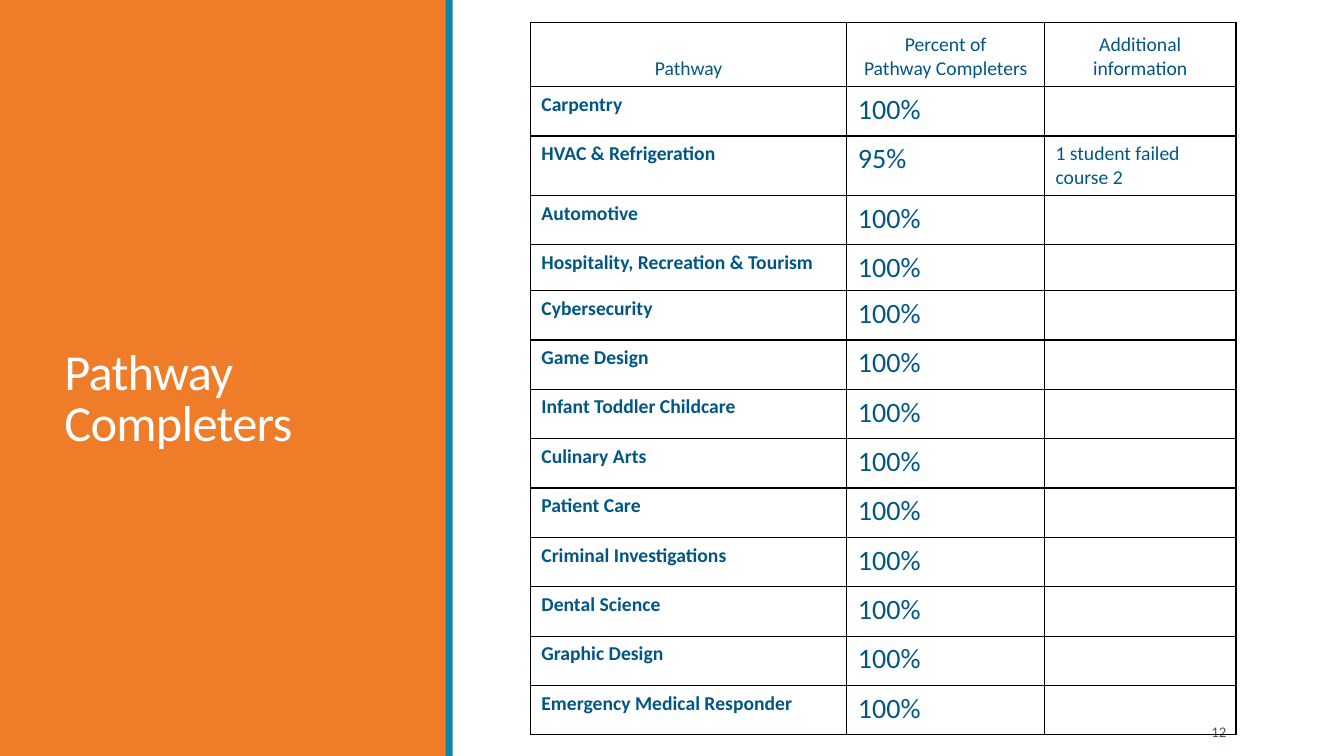
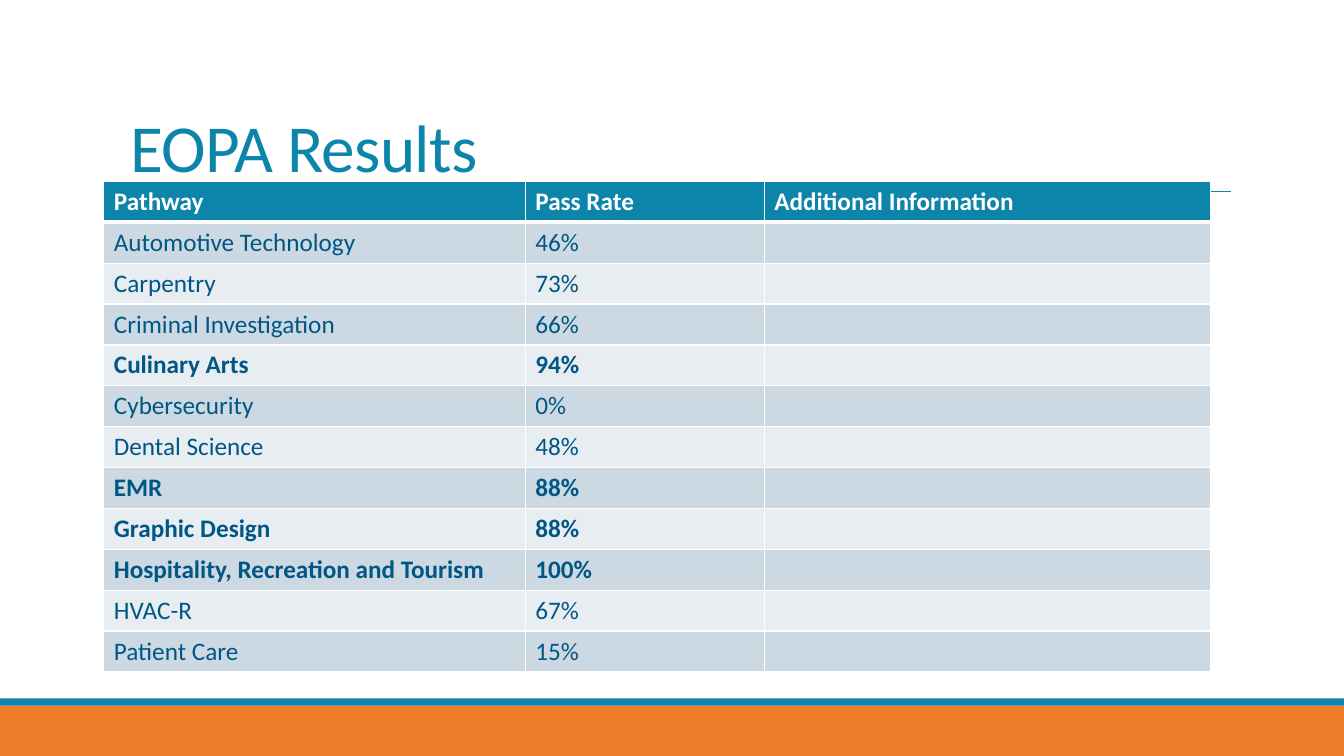
from lxml import etree
from pptx import Presentation
from pptx.dml.color import RGBColor
from pptx.enum.shapes import MSO_CONNECTOR, MSO_SHAPE
from pptx.enum.text import MSO_ANCHOR, PP_ALIGN
from pptx.oxml.ns import qn
from pptx.util import Inches, Pt

RECTANGLE = MSO_SHAPE.RECTANGLE
STRAIGHT = MSO_CONNECTOR.STRAIGHT
TOP, MIDDLE, BOTTOM = MSO_ANCHOR.TOP, MSO_ANCHOR.MIDDLE, MSO_ANCHOR.BOTTOM
LEFT, CENTER, RIGHT = PP_ALIGN.LEFT, PP_ALIGN.CENTER, PP_ALIGN.RIGHT

COLORS = {
    "orange": "EE7C29",
    "teal": "0D85AB",
    "navy": "005685",
    "slate": "44546A",
    "white": "FFFFFF",
    "black": "000000",
    "band_dark": "CCD9E2",
    "band_light": "E7EDF1",
}
FONT = "Calibri"
PAGE_WIDTH, PAGE_HEIGHT = 13.33, 7.5
STRIPE = 0.07

COMPLETERS = [
    ("Carpentry", "100%", ""),
    ("HVAC & Refrigeration", "95%", "1 student failed course 2"),
    ("Automotive", "100%", ""),
    ("Hospitality, Recreation & Tourism", "100%", ""),
    ("Cybersecurity", "100%", ""),
    ("Game Design", "100%", ""),
    ("Infant Toddler Childcare", "100%", ""),
    ("Culinary Arts", "100%", ""),
    ("Patient Care", "100%", ""),
    ("Criminal Investigations", "100%", ""),
    ("Dental Science", "100%", ""),
    ("Graphic Design", "100%", ""),
    ("Emergency Medical Responder", "100%", ""),
]
COMPLETERS_HEADER = ("Pathway", "Percent of\nPathway Completers", "Additional information")

PASS_RATES = [
    ("Automotive Technology", 46),
    ("Carpentry", 73),
    ("Criminal Investigation", 66),
    ("Culinary Arts", 94),
    ("Cybersecurity", 0),
    ("Dental Science", 48),
    ("EMR", 88),
    ("Graphic Design", 88),
    ("Hospitality, Recreation and Tourism", 100),
    ("HVAC-R", 67),
    ("Patient Care", 15),
]
PASS_RATES_HEADER = ("Pathway", "Pass Rate", "Additional Information")
HIGH_PASS_RATE = 80


def rgb(name):
    return RGBColor.from_string(COLORS[name])


def add_band(page, box, color):
    band = page.shapes.add_shape(RECTANGLE, *map(Inches, box))
    band.shadow.inherit = False
    band.fill.solid()
    band.fill.fore_color.rgb = rgb(color)
    band.line.fill.background()


def write(frame, text, size, color, bold=False, align=LEFT):
    frame.text = text
    font_format = {"name": FONT, "size": Pt(size), "bold": bold}
    for para in frame.paragraphs:
        para.alignment = align
        for span in para.runs:
            for key, value in font_format.items():
                setattr(span.font, key, value)
            span.font.color.rgb = rgb(color)


def add_text(page, box, text, size, color, anchor, align=LEFT):
    frame = page.shapes.add_textbox(*map(Inches, box)).text_frame
    frame.word_wrap = True
    frame.vertical_anchor = anchor
    write(frame, text, size, color, align=align)
    return frame


def add_title(page, box, text, size, color, anchor):
    frame = add_text(page, box, text, size, color, anchor)
    for para in frame.paragraphs:
        para.line_spacing = 0.85
        for span in para.runs:
            span.font._element.set("spc", "-50")


def add_rule(page, left, right, top):
    rule = page.shapes.add_connector(
        STRAIGHT, Inches(left), Inches(top), Inches(right), Inches(top))
    rule.line.color.rgb = rgb("teal")
    rule.line.width = Pt(0.5)
    etree.SubElement(rule._element.spPr, qn("a:effectLst"))


def add_grid(page, left, top, widths, heights):
    """Add a table without built-in header or banding styles."""
    table = page.shapes.add_table(
        len(heights), len(widths), Inches(left), Inches(top),
        Inches(sum(widths)), Inches(sum(heights))).table
    table.first_row = table.horz_banding = False
    for column, width in zip(table.columns, widths):
        column.width = Inches(width)
    for row, height in zip(table.rows, heights):
        row.height = Inches(height)
    return table


def set_borders(cell, color, **widths):
    """Draw all four cell edges, 1 point wide unless given by edge letter."""
    properties = cell._tc.get_or_add_tcPr()
    for edge in "LRTB":
        width = Pt(widths.get(edge, 1))
        line = etree.SubElement(properties, qn(f"a:ln{edge}"), w=str(width))
        fill = etree.SubElement(line, qn("a:solidFill"))
        etree.SubElement(fill, qn("a:srgbClr"), val=COLORS[color])


def add_completers_table(page, left, top):
    heights = [0.64] + [0.49] * len(COMPLETERS)
    heights[2], heights[4] = 0.59, 0.45
    table = add_grid(page, left, top, (3.14, 1.96, 1.9), heights)
    cell_format = {
        "margin_left": Inches(0.11), "margin_right": Inches(0.11),
        "margin_top": Inches(0.06), "margin_bottom": Inches(0.06),
    }
    for r, values in enumerate([COMPLETERS_HEADER] + COMPLETERS):
        header = r == 0
        for c, value in enumerate(values):
            cell = table.cell(r, c)
            for key, setting in cell_format.items():
                setattr(cell, key, setting)
            cell.vertical_anchor = BOTTOM if header else TOP
            set_borders(cell, "black")
            cell.fill.background()
            write(cell.text_frame, value, 20 if c == 1 and not header else 14, "navy",
                  bold=c == 0 and not header, align=CENTER if header else LEFT)


def add_pass_rates_table(page, left, top):
    rows = [PASS_RATES_HEADER] + [(name, f"{rate}%", "") for name, rate in PASS_RATES]
    bold_rows = [True] + [rate > HIGH_PASS_RATE for _, rate in PASS_RATES]
    table = add_grid(page, left, top, (4.18, 2.37, 4.43), [4.87 / len(rows)] * len(rows))
    for r, (values, bold) in enumerate(zip(rows, bold_rows)):
        fill = "teal" if r == 0 else ("band_light", "band_dark")[r % 2]
        for c, value in enumerate(values):
            cell = table.cell(r, c)
            set_borders(cell, "white", T=3 if r == 1 else 1, B=3 if r == 0 else 1)
            cell.fill.solid()
            cell.fill.fore_color.rgb = rgb(fill)
            write(cell.text_frame, value, 18, "white" if r == 0 else "navy", bold=bold)


def add_side_panel(page, width, title):
    add_band(page, (0, 0, width, PAGE_HEIGHT), "orange")
    add_title(page, (0.54, 0.82, width - 1.06, 6.31), title, 36, "white", MIDDLE)
    add_band(page, (width - 0.01, 0, STRIPE, PAGE_HEIGHT), "teal")


def add_footer_bands(page, top):
    add_band(page, (0, top, PAGE_WIDTH, PAGE_HEIGHT - top), "orange")
    add_band(page, (0, top - STRIPE, PAGE_WIDTH, STRIPE), "teal")


def build_completers_page(page):
    add_side_panel(page, 4.43, "Pathway Completers")
    add_text(page, (11.07, 7.06, 1.19, 0.4), "12", 10.5, "slate", MIDDLE, RIGHT)
    add_completers_table(page, 5.26, 0.22)


def build_results_page(page):
    add_footer_bands(page, 7)
    add_rule(page, 1.31, 12.21, 1.9)
    add_title(page, (1.2, 0.31, 11, 1.59), "EOPA Results", 48, "teal", BOTTOM)
    add_pass_rates_table(page, 1.03, 1.8)


def main():
    deck = Presentation()
    deck.slide_width, deck.slide_height = Inches(PAGE_WIDTH), Inches(PAGE_HEIGHT)
    blank = deck.slide_layouts[6]
    for build in (build_completers_page, build_results_page):
        build(deck.slides.add_slide(blank))
    deck.save("out.pptx")


if __name__ == "__main__":
    main()
